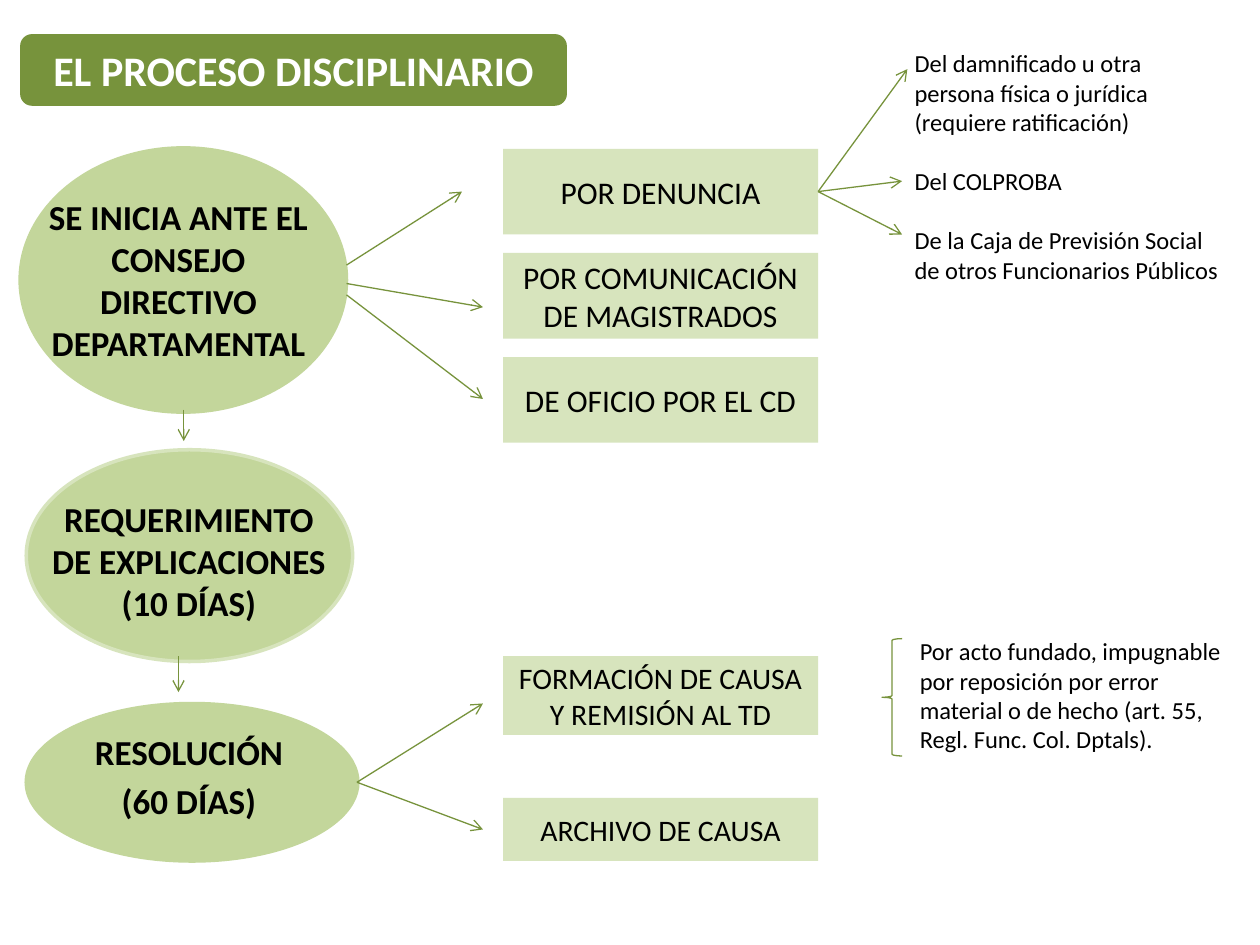
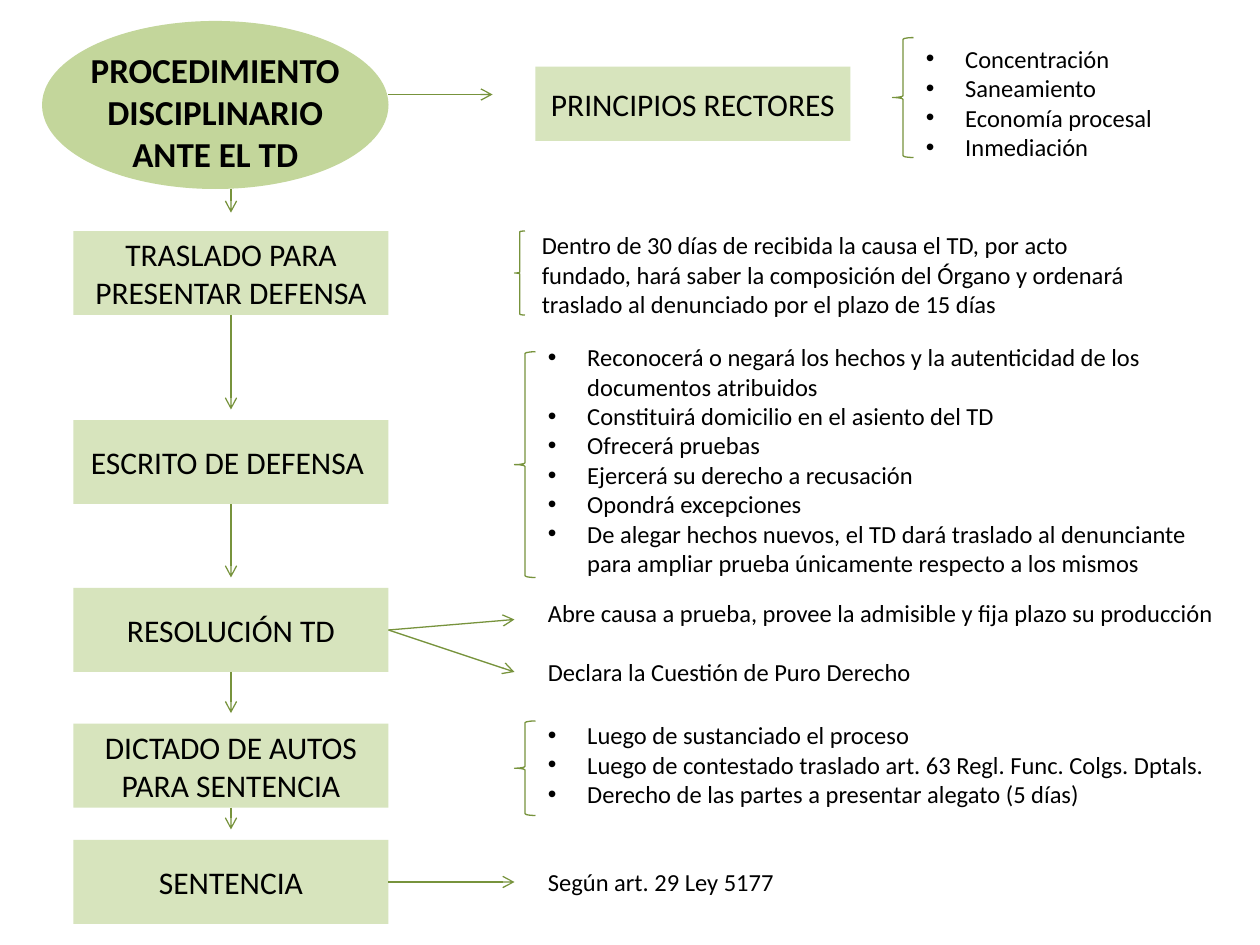
from lxml.etree import SubElement
from pptx import Presentation
from pptx.dml.color import RGBColor
from pptx.enum.shapes import MSO_CONNECTOR as Line, MSO_SHAPE as Kind
from pptx.enum.text import MSO_ANCHOR as Anchor, PP_ALIGN as Align
from pptx.oxml.ns import qn
from pptx.util import Pt

FONT = "Calibri"
HUES = {"dark": "77933C", "mid": "C3D69B", "pale": "D7E4BD",
        "ink": "000000", "white": "FFFFFF"}
WIDE = 180  # width of every step box
GAP = 17    # one line of note text

# Slide 1. Stages: text lines, text box, ellipse, outline
TITLE = "EL PROCESO DISCIPLINARIO"
STAGES = [
    (["SE INICIA ANTE EL CONSEJO DIRECTIVO DEPARTAMENTAL"],
     (18, 108, 168, 88.5), (11.5, 84.5, 186.5, 151), "mid"),
    (["REQUERIMIENTO DE EXPLICACIONES (10 DÍAS)"],
     (18, 281, 180, 88.5), (15, 257, 186.5, 121), "pale"),
    (["RESOLUCIÓN", "(60 DÍAS)"],
     (24, 414, 168, 67), (15, 402, 189.5, 90), "mid"),
]
STARTS = ["POR DENUNCIA", "POR COMUNICACIÓN DE MAGISTRADOS",
          "DE OFICIO POR EL CD"]
ENDS = [("FORMACIÓN DE CAUSA Y REMISIÓN AL TD", 375, 45),
        ("ARCHIVO DE CAUSA", 456, 36)]
SOURCES = [
    ["Del damnificado u otra persona física o jurídica "
     "(requiere ratificación)"],
    ["Del COLPROBA"],
    ["De la Caja de Previsión Social", "de otros Funcionarios Públicos"],
]
APPEAL = [["Por acto fundado, impugnable por reposición por error material "
           "o de hecho (art. 55, Regl. Func. Col. Dptals)."]]
PATHS = [  # free arrows: start, tip
    ((198, 151.5), (264, 109.5)), ((198, 162), (276, 175.5)),
    ((198, 168.5), (276, 228)),
    ((105, 234), (105, 252)), ((102, 375), (102, 395.5)),
    ((204, 447), (276, 402)), ((204, 447), (276, 474)),
]
TIPS = [(518.5, 39.5), (515.5, 103.5), (515.5, 134)]

# Slide 2. Steps: text, top, note box, bullets, note groups, brace, arrow tips
HEAD = ["PROCEDIMIENTO DISCIPLINARIO ANTE EL TD"]
RULES = [["Concentración", "Saneamiento", "Economía procesal",
          "Inmediación"]]
STEPS = [
    ("TRASLADO PARA PRESENTAR DEFENSA", 132, (302.5, 128, 369, 58.5), False,
     [["Dentro de 30 días de recibida la causa el TD, por acto fundado, "
       "hará saber la composición del Órgano y ordenará traslado al "
       "denunciado por el plazo de 15 días"]], (294, 132, 6, 48), []),
    ("ESCRITO DE DEFENSA ", 240, (306, 192, 396, 143), True,
     [["Reconocerá o negará los hechos y la autenticidad de los "
       "documentos atribuidos",
       "Constituirá domicilio en el asiento del TD",
       "Ofrecerá pruebas",
       "Ejercerá su derecho a recusación",
       "Opondrá excepciones",
       "De alegar hechos nuevos, el TD dará traslado al denunciante para "
       "ampliar prueba únicamente respecto a los mismos"]],
     (294, 201, 12, 129), []),
    ("RESOLUCIÓN TD", 336, (306, 338, 396, 58.5), False,
     [["Abre causa a prueba, provee la admisible y fija plazo su producción"],
      ["Declara la Cuestión de Puro Derecho"]],
     None, [(294, 354), (294, 384)]),
    ("DICTADO DE AUTOS PARA SENTENCIA", 413.5, (306, 408, 396, 58.5), True,
     [["Luego de sustanciado el proceso",
       "Luego de contestado traslado art. 63 Regl. Func. Colgs. Dptals.",
       "Derecho de las partes a presentar alegato (5 días)"]],
     (294, 412, 12, 54), []),
    ("SENTENCIA", 480, (306, 492, 162, 24.5), False,
     [["Según art. 29 Ley 5177"]], None, [(294, 504)]),
]


def hue(name):
    return RGBColor.from_string(HUES[name])


def style(para, size, color="ink", bold=False, align=Align.LEFT):
    para.alignment = align
    for run in para.runs:
        font = run.font
        font.name, font.size, font.bold = FONT, Pt(size), bold
        font.color.rgb = hue(color)


def shape(page, kind, at, fill=None, edge=None, width=2):
    item = page.shapes.add_shape(kind, *map(Pt, at))
    item.shadow.inherit = False
    if fill:
        item.fill.solid()
        item.fill.fore_color.rgb = hue(fill)
    else:
        item.fill.background()
    if edge:
        item.line.color.rgb = hue(edge)
        item.line.width = Pt(width)
    else:
        item.line.fill.background()
    return item


def label(item, text, size, **look):
    frame = item.text_frame
    frame.word_wrap = True
    frame.vertical_anchor = Anchor.MIDDLE
    frame.text = text
    style(frame.paragraphs[0], size, align=Align.CENTER, **look)


def box(page, text, at, size=18):
    item = shape(page, Kind.RECTANGLE, at, "pale")
    label(item, text, size)
    return item


def brace(page, at):
    shape(page, Kind.LEFT_BRACE, at, edge="dark", width=0.75)


def lines(page, at, texts):
    """Add a text box and yield its paragraphs, one per text."""
    frame = page.shapes.add_textbox(*map(Pt, at)).text_frame
    frame.word_wrap = True
    for i, text in enumerate(texts):
        para = frame.add_paragraph() if i else frame.paragraphs[0]
        para.text = text
        yield para


def stage(page, texts, at, oval, edge=None):
    shape(page, Kind.OVAL, oval, "mid", edge)
    for para in lines(page, at, texts):
        style(para, 20, bold=True, align=Align.CENTER)
        para.space_before = Pt(4)


def notes(page, at, groups, dots=False):
    """Write groups of lines, a line's gap apart, with or without bullets."""
    flat = [(text, g and not i) for g, group in enumerate(groups)
            for i, text in enumerate(group)]
    for para, (_, gap) in zip(lines(page, at, [t for t, _ in flat]), flat):
        style(para, 14)
        if gap:
            para.space_before = Pt(GAP)
        if dots:
            props = para._p.get_or_add_pPr()
            props.set("marL", str(Pt(22.5)))
            props.set("indent", str(-Pt(22.5)))
            SubElement(props, qn("a:buFont"), typeface="Arial")
            SubElement(props, qn("a:buChar"), char="•")


def arrow(page, start, tip, item=None, side=3):
    line = page.shapes.add_connector(Line.STRAIGHT, *map(Pt, start + tip))
    if item is not None:
        line.begin_connect(item, side)
    line.line.color.rgb = hue("dark")
    line.line.width = Pt(0.75)
    SubElement(line.line._get_or_add_ln(), qn("a:tailEnd"), type="arrow")
    SubElement(line._element.spPr, qn("a:effectLst"))


def process(page):
    banner = shape(page, Kind.ROUNDED_RECTANGLE, (11.5, 19.5, 312.5, 41),
                   "dark")
    label(banner, TITLE, 24, color="white", bold=True)
    for row in STAGES:
        stage(page, *row)
    left = 287.5
    starts = [box(page, text, (left, 85 + 59.5 * i, WIDE, 49))
              for i, text in enumerate(STARTS)]
    for text, top, high in ENDS:
        box(page, text, (left, top, WIDE, high), 17)
    notes(page, (515.5, 24, 192, 160), SOURCES)
    notes(page, (518.5, 360, 189.5, 75), APPEAL)
    brace(page, (504, 365, 11.5, 67))
    for start, tip in PATHS:
        arrow(page, start, tip)
    for tip in TIPS:
        arrow(page, (left + WIDE, 109.5), tip, starts[0])


def trial(page):
    stage(page, HEAD, (42, 24, 162, 60), (24, 12, 198, 96))
    box(page, "PRINCIPIOS RECTORES", (306, 38, WIDE, 42.5))
    notes(page, (522, 21.5, 180, 75), RULES, True)
    brace(page, (510, 21.5, 12, 68.5))
    arrow(page, (222, 54), (281.5, 54))
    left, high = 42, 48
    mid = left + WIDE / 2
    arrow(page, (mid, 108), (mid, 121.5))
    last = None
    for text, top, at, dots, groups, curl, tips in STEPS:
        step = box(page, text, (left, top, WIDE, high))
        if last is not None:
            arrow(page, (mid, top - 12), (mid, top - 6), last, 2)
        notes(page, at, groups, dots)
        if curl:
            brace(page, curl)
        for tip in tips:
            arrow(page, (left + WIDE, top + high / 2), tip, step)
        last = step


def main():
    deck = Presentation()
    deck.slide_width, deck.slide_height = Pt(720), Pt(540)
    for draw in (process, trial):
        draw(deck.slides.add_slide(deck.slide_layouts[6]))
    deck.save("out.pptx")


if __name__ == "__main__":
    main()
